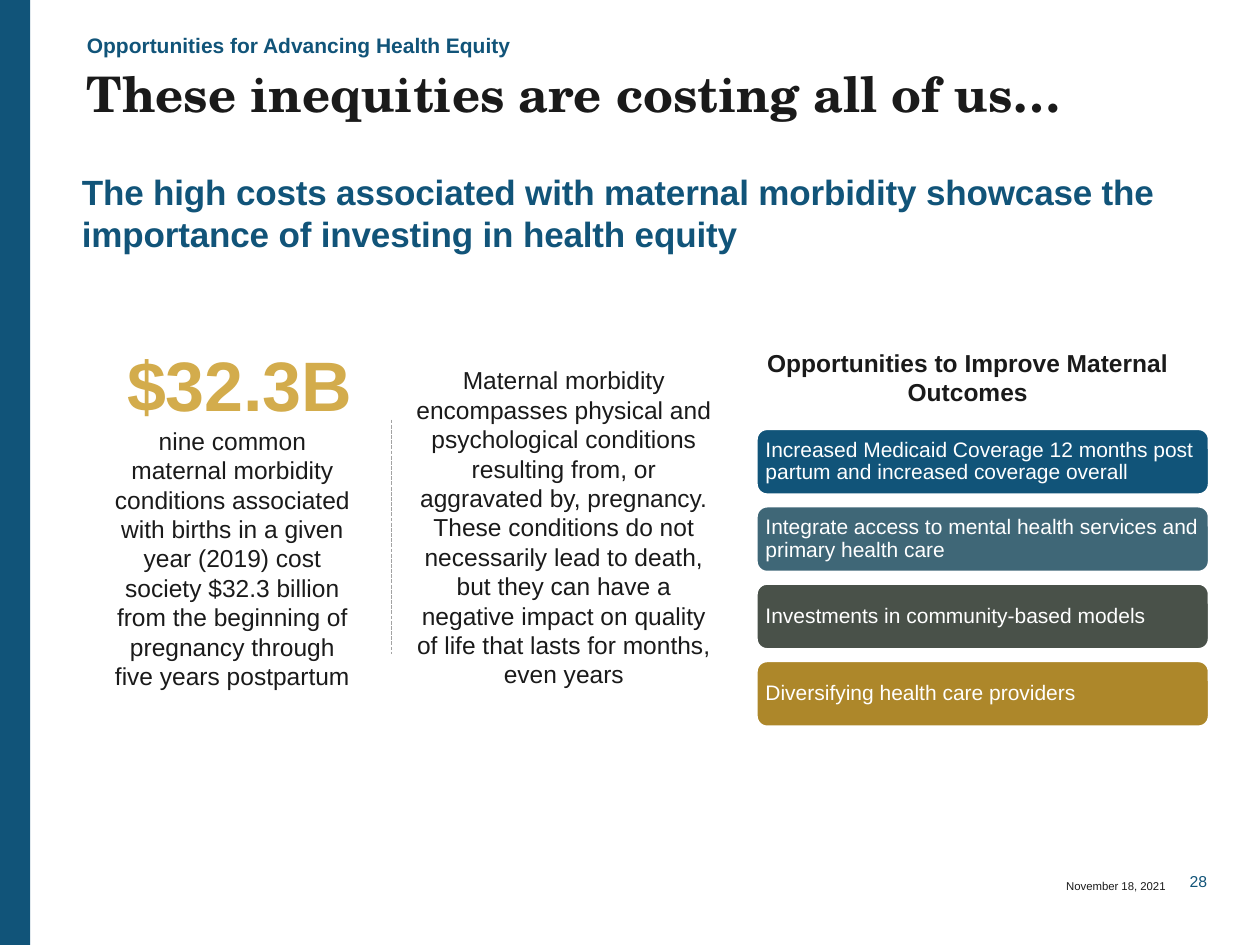
from dataclasses import dataclass
from lxml import etree
from pptx import Presentation
from pptx.dml.color import RGBColor
from pptx.enum.dml import MSO_LINE
from pptx.enum.shapes import MSO_CONNECTOR, MSO_SHAPE
from pptx.enum.text import MSO_ANCHOR, PP_ALIGN
from pptx.oxml.ns import qn
from pptx.util import Inches, Pt

LEFT, MID, RIGHT = PP_ALIGN.LEFT, PP_ALIGN.CENTER, PP_ALIGN.RIGHT
TOP, CORE, BASE = MSO_ANCHOR.TOP, MSO_ANCHOR.MIDDLE, MSO_ANCHOR.BOTTOM
RECT, ROUND = MSO_SHAPE.RECTANGLE, MSO_SHAPE.ROUNDED_RECTANGLE
LINE, DASH = MSO_CONNECTOR.STRAIGHT, MSO_LINE.SQUARE_DOT


@dataclass(frozen=True)
class Theme:
    sans: str = "Arial"
    serif: str = "TeX Gyre Schola"
    blue: str = "115479"
    teal: str = "3F6777"
    moss: str = "495149"
    ochre: str = "AD872A"
    gold: str = "D3AC4C"
    ink: str = "1A1A1A"
    gray: str = "A3A3A3"
    white: str = "FFFFFF"
    title: float = 28
    lead: float = 20
    stat: float = 40
    body: float = 14
    small: float = 12
    page: float = 9
    date: float = 6.5


theme = Theme()
deck = Presentation()
deck.slide_width, deck.slide_height = Inches(10), Inches(7.5)
col, row = deck.slide_width / 100, deck.slide_height / 75
slide = deck.slides.add_slide(deck.slide_layouts[6])
shapes = slide.shapes


def span(x, y, w, h):
    return [round(v) for v in (x * col, y * row, w * col, h * row)]


def write(text, box=None, shape=None, size=theme.body, color=theme.ink,
          font=theme.sans, bold=False, align=LEFT, anchor=TOP,
          pad=(0, 0), lead=None, track=None):
    shape = shape or shapes.add_textbox(*span(*box))
    frame = shape.text_frame
    frame.word_wrap = True
    frame.vertical_anchor = anchor
    frame.margin_left = frame.margin_right = round(pad[0] * col)
    frame.margin_top = frame.margin_bottom = round(pad[1] * row)
    para = frame.paragraphs[0]
    para.alignment = align
    if lead:
        para.line_spacing = lead
    run = para.add_run()
    run.text = text
    run.font.name, run.font.size, run.font.bold = font, Pt(size), bold
    run.font.color.rgb = RGBColor.from_string(color)
    if track:
        run.font._element.set("spc", str(track))


band = shapes.add_shape(RECT, *span(0, 0, 2.4, 75))
band.shadow.inherit = False
band.fill.solid()
band.fill.fore_color.rgb = RGBColor.from_string(theme.blue)
band.line.fill.background()

write("Opportunities for Advancing Health Equity", (6.9, 1.9, 86.6, 2.7),
      size=theme.small, color=theme.blue, bold=True, anchor=BASE)
write("These inequities are costing all of us…", (6.9, 5.6, 86.6, 8),
      size=theme.title, font=theme.serif, bold=True, lead=0.9)
write("The high costs associated with maternal morbidity showcase the "
      "importance of investing in health equity", (6.5, 13.5, 92, 52.4),
      size=theme.lead, color=theme.blue, bold=True, track=-10)

write("$32.3B", (6.9, 27.1, 24.2, 6.1), size=theme.stat, color=theme.gold,
      bold=True, align=MID, track=-10)
write("nine common maternal morbidity conditions associated with births in a "
      "given year (2019) cost society $32.3 billion from the beginning of "
      "pregnancy through five years postpartum", (7.6, 33.3, 21.7, 19.9),
      align=MID, pad=(1, 0.5))
write("Maternal morbidity encompasses physical and psychological conditions "
      "resulting from, or aggravated by, pregnancy. These conditions do not "
      "necessarily lead to death, but they can have a negative impact on "
      "quality of life that lasts for months, even years",
      (31.8, 28.5, 25.9, 24.6), align=MID, pad=(1, 0.5))

rule = shapes.add_connector(LINE, *span(31.1, 33.3, 31.1, 51.9))
rule.line.color.rgb = RGBColor.from_string(theme.gray)
rule.line.width = Pt(0.75)
rule.line.dash_style = DASH
etree.SubElement(rule._element.spPr, qn("a:effectLst"))

write("Opportunities to Improve Maternal Outcomes", (57.7, 27.1, 38.2, 5.7),
      bold=True, align=MID, pad=(1, 0.5))
goals = [
    ("Increased Medicaid Coverage 12 months post partum and increased "
     "coverage overall", theme.blue),
    ("Integrate access to mental health services and primary health care",
     theme.teal),
    ("Investments in community-based models", theme.moss),
    ("Diversifying health care providers", theme.ochre),
]
for i, (text, color) in enumerate(goals):
    pill = shapes.add_shape(ROUND, *span(60, 34 + i * 6.14, 36, 5.3))
    pill.shadow.inherit = False
    pill.fill.solid()
    pill.fill.fore_color.rgb = RGBColor.from_string(color)
    pill.line.color.rgb = RGBColor.from_string(theme.white)
    pill.line.width = Pt(2)
    write(text, shape=pill, size=theme.small, color=theme.white,
          anchor=CORE, pad=(0.5, 0.5), lead=0.9)

write("November 18, 2021", (59.7, 69.3, 33.8, 3), size=theme.date,
      align=RIGHT, pad=(1, 0.5))
write("28", (92.7, 68.8, 3.1, 2.2), size=theme.page, color=theme.blue,
      align=RIGHT, anchor=CORE)

deck.save("out.pptx")
